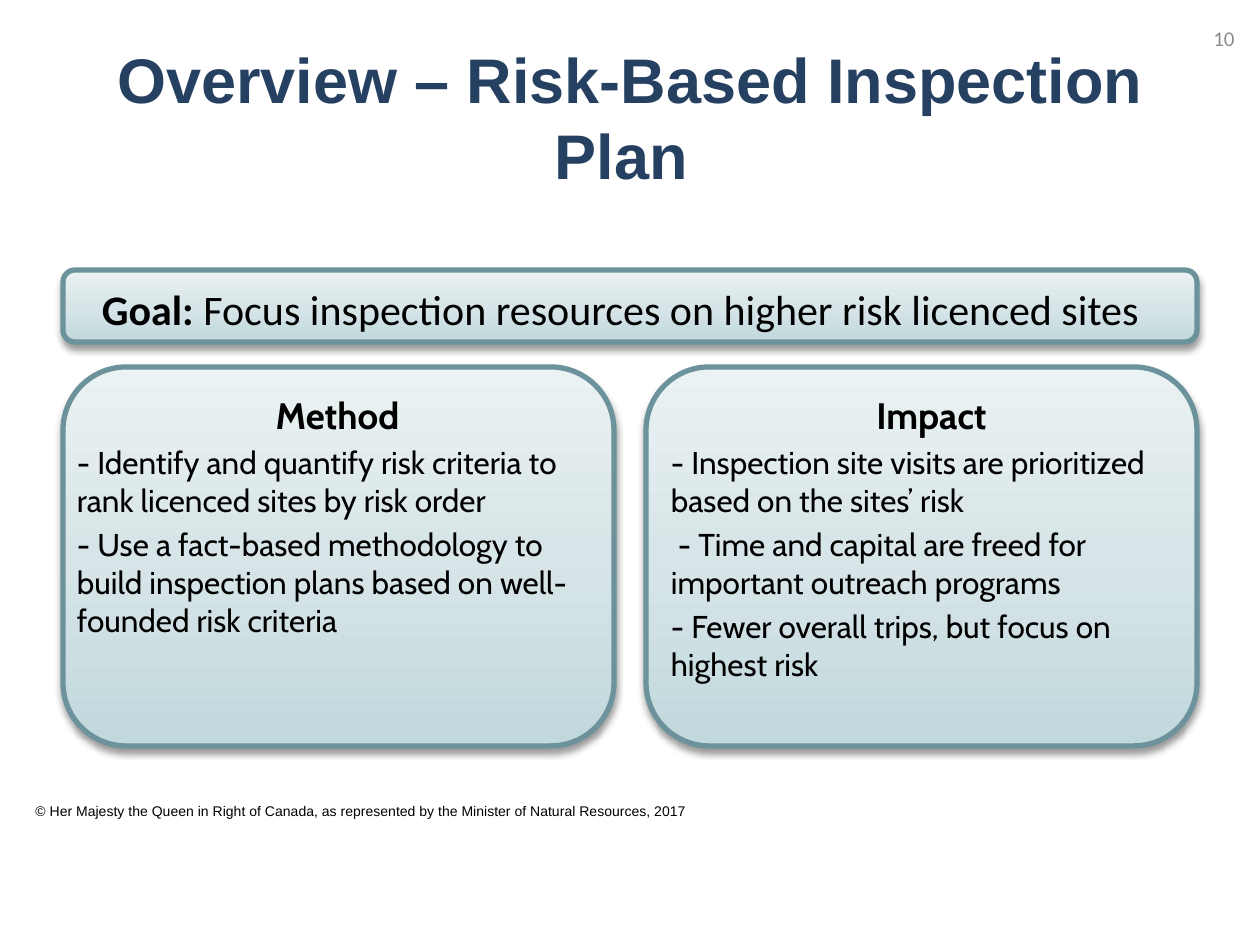
from copy import deepcopy

from lxml import etree
from pptx import Presentation
from pptx import util as u
from pptx.dml.color import RGBColor
from pptx.enum import shapes, text
from pptx.oxml.ns import qn

SCALE = 914400 / 126
ALIGN = text.PP_ALIGN
ANCHOR = text.MSO_ANCHOR
CARD_WIDTH, CARD_HEIGHT = 551, 379
LEFT, WIDTH = 63, 1134


def px(length):
    """Turn px into EMU."""
    return u.Emu(round(length * SCALE))


def colour(value):
    """Turn a hex string into a colour."""
    return RGBColor.from_string(value)


def add_span(para, words, font, size, bold=False, ink="000000"):
    """Add one formatted run to a paragraph."""
    span = para.add_run()
    span.text = words
    span.font.name = font
    span.font.size = u.Pt(size)
    span.font.bold = bold
    span.font.color.rgb = colour(ink)


def add_box(page, left, top, width, height, align=ALIGN.LEFT, anchor=ANCHOR.TOP):
    """Add a wrapping text box and return its frame."""
    box = page.shapes.add_textbox(px(left), px(top), px(width), px(height))
    frame = box.text_frame
    frame.word_wrap = True
    frame.vertical_anchor = anchor
    frame.paragraphs[0].alignment = align
    return frame


def add_panel(page, left, top, width, height):
    """Add a rounded panel with a gradient, a border and a soft shadow."""
    panel = page.shapes.add_shape(
        shapes.MSO_SHAPE.ROUNDED_RECTANGLE, px(left), px(top), px(width), px(height))
    panel.fill.gradient()
    panel.fill.gradient_angle = 90
    stops = panel._element.spPr.find(".//" + qn("a:gsLst"))
    stops.insert(1, deepcopy(stops[0]))
    shades = ((0, "C1D8DC"), (0.5, "D8E5E8"), (1, "EBF2F3"))
    for stop, (position, shade) in zip(panel.fill.gradient_stops, shades):
        stop.position = position
        stop.color.rgb = colour(shade)
    panel.line.color.rgb = colour("6C939B")
    panel.line.width = u.Pt(3)
    panel.shadow.inherit = False
    effects = panel._element.spPr.find(qn("a:effectLst"))
    shadow = etree.SubElement(
        effects, qn("a:outerShdw"), blurRad=str(u.Pt(4)), dist=str(u.Pt(3)),
        dir="5400000", rotWithShape="0")
    tint = etree.SubElement(shadow, qn("a:srgbClr"), val="000000")
    etree.SubElement(tint, qn("a:alpha"), val="40000")


def add_title(page, left, top, width, height):
    """Place and format the title placeholder."""
    title = page.shapes.title
    title.left, title.top, title.width, title.height = map(px, (left, top, width, height))
    frame = title.text_frame
    frame.auto_size = text.MSO_AUTO_SIZE.NONE
    frame.word_wrap = True
    frame.vertical_anchor = ANCHOR.MIDDLE
    para = frame.paragraphs[0]
    para.alignment = ALIGN.CENTER
    add_span(para, "Overview – Risk-Based Inspection Plan ", "Arial", 36, True, "254061")


def add_goal(page, left, top, width, height):
    """Add the goal banner."""
    add_panel(page, left, top, width, height)
    para = add_box(page, left, top + 7, width, 66, ALIGN.CENTER).paragraphs[0]
    add_span(para, "Goal: ", "Calibri", 24, True)
    add_span(para, "Focus inspection resources on higher risk licenced sites  ", "Calibri", 24)


def add_card(page, left, top, indent, heading, points):
    """Add a card with a centred heading and its points."""
    add_panel(page, left, top, CARD_WIDTH, CARD_HEIGHT)
    frame = add_box(page, left + indent, top + 21, 539, 357, ALIGN.CENTER)
    frame.margin_left = frame.margin_right = px(9)
    frame.margin_top = frame.margin_bottom = px(5)
    add_span(frame.paragraphs[0], heading, "Cabin", 21, True)
    for point in points:
        para = frame.add_paragraph()
        para.space_before = u.Pt(3.6)
        add_span(para, point, "Cabin", 18)


def add_margins(page):
    """Add the copyright line and the page number."""
    notice = add_box(page, 23, 796, 685, 47)
    add_span(notice.paragraphs[0],
             "© Her Majesty the Queen in Right of Canada, as represented by "
             "the Minister of Natural Resources, 2017", "Arial", 8)
    number = add_box(page, 1183, 13, 64, 50, ALIGN.RIGHT, ANCHOR.MIDDLE)
    add_span(number.paragraphs[0], "10", "Calibri", 12, ink="8C8C8C")


def main():
    """Build and save the slide."""
    deck = Presentation()
    deck.slide_width, deck.slide_height = px(1260), px(945)
    page = deck.slides.add_slide(deck.slide_layouts.get_by_name("Title Only"))
    add_title(page, LEFT, 38, WIDTH, 157)
    add_goal(page, LEFT, 270, WIDTH, 72)
    cards = (
        ("Method", 5, (
            "- Identify and quantify risk criteria to rank licenced sites by risk order",
            "- Use a fact-based methodology to build inspection plans based on "
            "well-founded risk criteria")),
        ("Impact", 16, (
            "- Inspection site visits are prioritized based on the sites’ risk",
            " - Time and capital are freed for important outreach programs",
            "- Fewer overall trips, but focus on highest risk")),
    )
    for index, (heading, indent, points) in enumerate(cards):
        left = LEFT + index * (WIDTH - CARD_WIDTH)
        add_card(page, left, 367, indent, heading, points)
    add_margins(page)
    deck.save("out.pptx")


if __name__ == "__main__":
    main()
